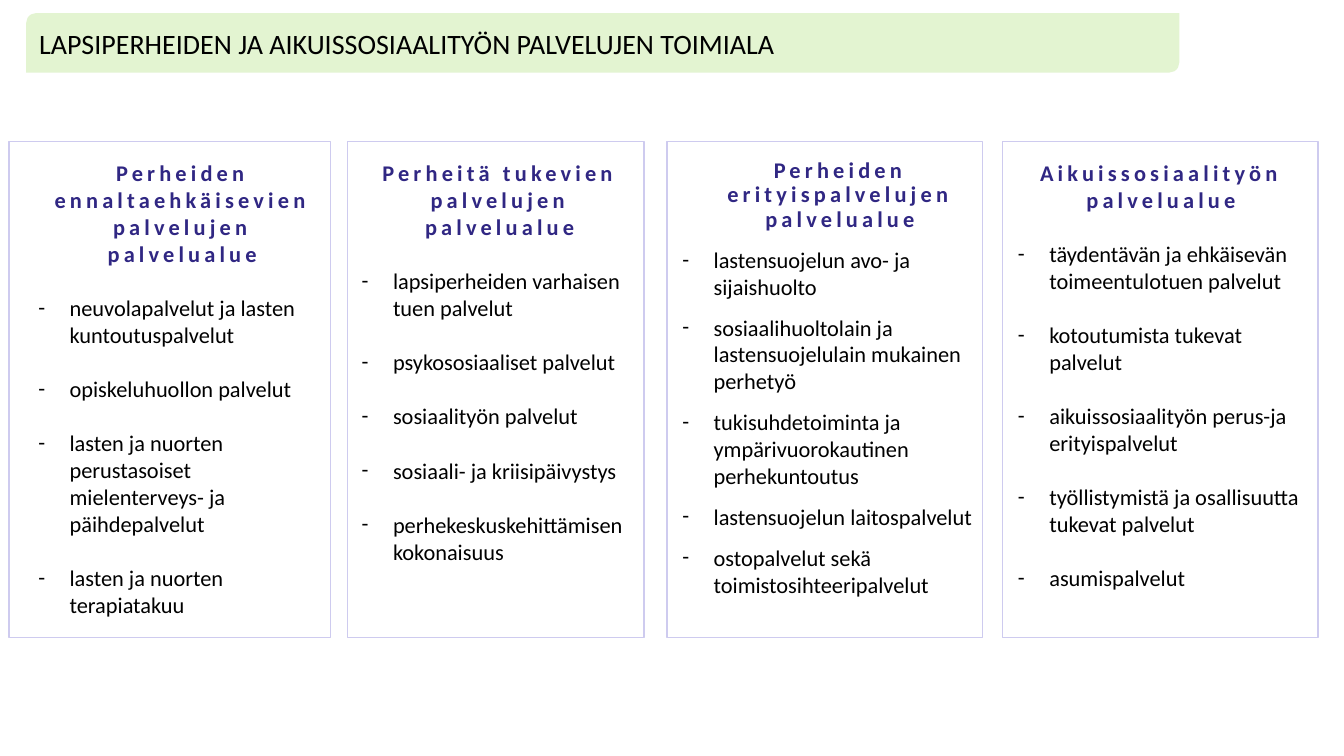
from lxml import etree
from pptx import Presentation
from pptx.dml.color import RGBColor
from pptx.enum import shapes, text
from pptx.oxml.ns import qn
from pptx.util import Cm, Pt

TITLE = "LAPSIPERHEIDEN JA AIKUISSOSIAALITYÖN PALVELUJEN TOIMIALA"
FONT = "Calibri"
COLORS = {"banner": "E3F4D1", "frame": "CECBEF", "heading": "302783", "body": "000000"}

# Frame and text are (left, width) in cm; gap and lines are paragraph spacing
COLUMNS = [
    {"frame": (0.23, 8.1), "text": (0.71, 7.77), "gap": 19.5, "lines": 1.0,
     "heading": "Perheiden ennaltaehkäisevien palvelujen palvelualue",
     "items": ["neuvolapalvelut ja lasten kuntoutuspalvelut",
               "opiskeluhuollon palvelut",
               "lasten ja nuorten perustasoiset mielenterveys- ja päihdepalvelut",
               "lasten ja nuorten terapiatakuu"]},
    {"frame": (8.76, 7.47), "text": (8.86, 7.47), "gap": 19.5, "lines": 1.0,
     "heading": "Perheitä tukevien palvelujen palvelualue",
     "items": ["lapsiperheiden varhaisen tuen palvelut",
               "psykososiaaliset palvelut",
               "sosiaalityön palvelut",
               "sosiaali- ja kriisipäivystys",
               "perhekeskuskehittämisen kokonaisuus"]},
    {"frame": (16.81, 7.95), "text": (16.94, 8.46), "gap": 10, "lines": 0.9,
     "heading": "Perheiden erityispalvelujen palvelualue",
     "items": ["lastensuojelun avo- ja sijaishuolto",
               "sosiaalihuoltolain ja lastensuojelulain mukainen perhetyö",
               "tukisuhdetoiminta ja ympärivuorokautinen perhekuntoutus",
               "lastensuojelun laitospalvelut",
               "ostopalvelut sekä toimistosihteeripalvelut"]},
    {"frame": (25.27, 7.95), "text": (25.4, 7.72), "gap": 19.5, "lines": 1.0,
     "heading": "Aikuissosiaalityön palvelualue",
     "items": ["täydentävän ja ehkäisevän toimeentulotuen palvelut",
               "kotoutumista tukevat palvelut",
               "aikuissosiaalityön perus-ja erityispalvelut",
               "työllistymistä ja osallisuutta tukevat palvelut",
               "asumispalvelut"]},
]
FRAME_TOP, FRAME_HEIGHT = 3.56, 12.5
TEXT_TOP, TEXT_HEIGHT = 3.89, 11.9
INDENT = Cm(0.79)


def place(shape, left, top, width, height):
    shape.left, shape.top, shape.width, shape.height = map(Cm, (left, top, width, height))


def style(para, size, color, bold=False):
    for span in para.runs:
        span.font.name, span.font.size, span.font.bold = FONT, Pt(size), bold
        span.font.color.rgb = RGBColor.from_string(COLORS[color])


def set_bullet(para, dash):
    props = para._p.get_or_add_pPr()
    props.set("marL", str(INDENT if dash else 0))
    props.set("indent", str(-INDENT if dash else 0))
    if dash:
        etree.SubElement(props, qn("a:buFont")).set("typeface", FONT)
        etree.SubElement(props, qn("a:buChar")).set("char", "-")
    else:
        etree.SubElement(props, qn("a:buNone"))


def prepare(frame, anchor):
    frame.word_wrap = True
    frame.auto_size = text.MSO_AUTO_SIZE.NONE
    frame.vertical_anchor = anchor


def fill_column(box, column):
    left, width = column["text"]
    place(box, left, TEXT_TOP, width, TEXT_HEIGHT)
    frame = box.text_frame
    frame.text = "\n".join([column["heading"], *column["items"]])
    prepare(frame, text.MSO_ANCHOR.TOP)
    for number, para in enumerate(frame.paragraphs):
        is_item = number > 0
        set_bullet(para, is_item)
        para.alignment = text.PP_ALIGN.LEFT if is_item else text.PP_ALIGN.CENTER
        para.line_spacing = 1.0 if is_item else column["lines"]
        para.space_before = Pt(column["gap"] if is_item else 0)
        style(para, 16, "body" if is_item else "heading", bold=not is_item)
    # Wide letter spacing in the heading
    for span in frame.paragraphs[0].runs:
        span._r.get_or_add_rPr().set("spc", "300")


def add_frame(page, left, width):
    frame = page.shapes.add_shape(shapes.MSO_SHAPE.RECTANGLE, Cm(left), Cm(FRAME_TOP),
                                  Cm(width), Cm(FRAME_HEIGHT))
    frame.shadow.inherit = False
    frame.fill.background()
    frame.line.color.rgb = RGBColor.from_string(COLORS["frame"])
    frame.line.width = Pt(1)


def main():
    deck = Presentation()
    deck.slide_width, deck.slide_height = Cm(33.87), Cm(19.05)
    # The comparison layout offers a title and four body placeholders
    page = deck.slides.add_slide(deck.slide_layouts[4])
    title, *bodies = page.placeholders

    # Title on its green banner
    banner = page.shapes.add_shape(shapes.MSO_SHAPE.ROUND_2_DIAG_RECTANGLE,
                                   Cm(0.66), Cm(0.33), Cm(29.06), Cm(1.5))
    banner.shadow.inherit = False
    banner.fill.solid()
    banner.fill.fore_color.rgb = RGBColor.from_string(COLORS["banner"])
    banner.line.fill.background()
    title.element.addprevious(banner.element)
    place(title, 0.73, 0.33, 28.9, 1.5)
    title.text_frame.text = TITLE
    prepare(title.text_frame, text.MSO_ANCHOR.MIDDLE)
    title.text_frame.paragraphs[0].alignment = text.PP_ALIGN.LEFT
    style(title.text_frame.paragraphs[0], 20, "body")

    # Four service areas
    for box, column in zip(bodies, COLUMNS):
        fill_column(box, column)
        add_frame(page, *column["frame"])

    deck.save("out.pptx")


if __name__ == "__main__":
    main()
